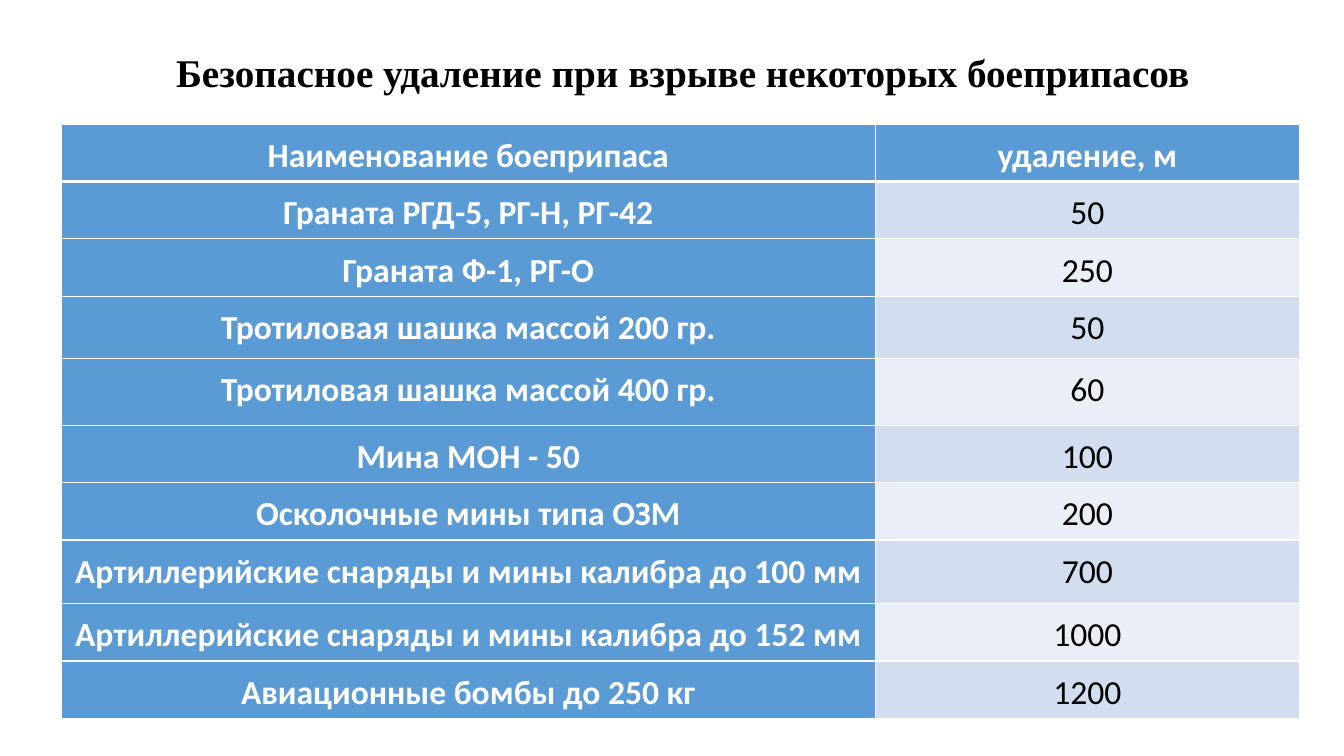
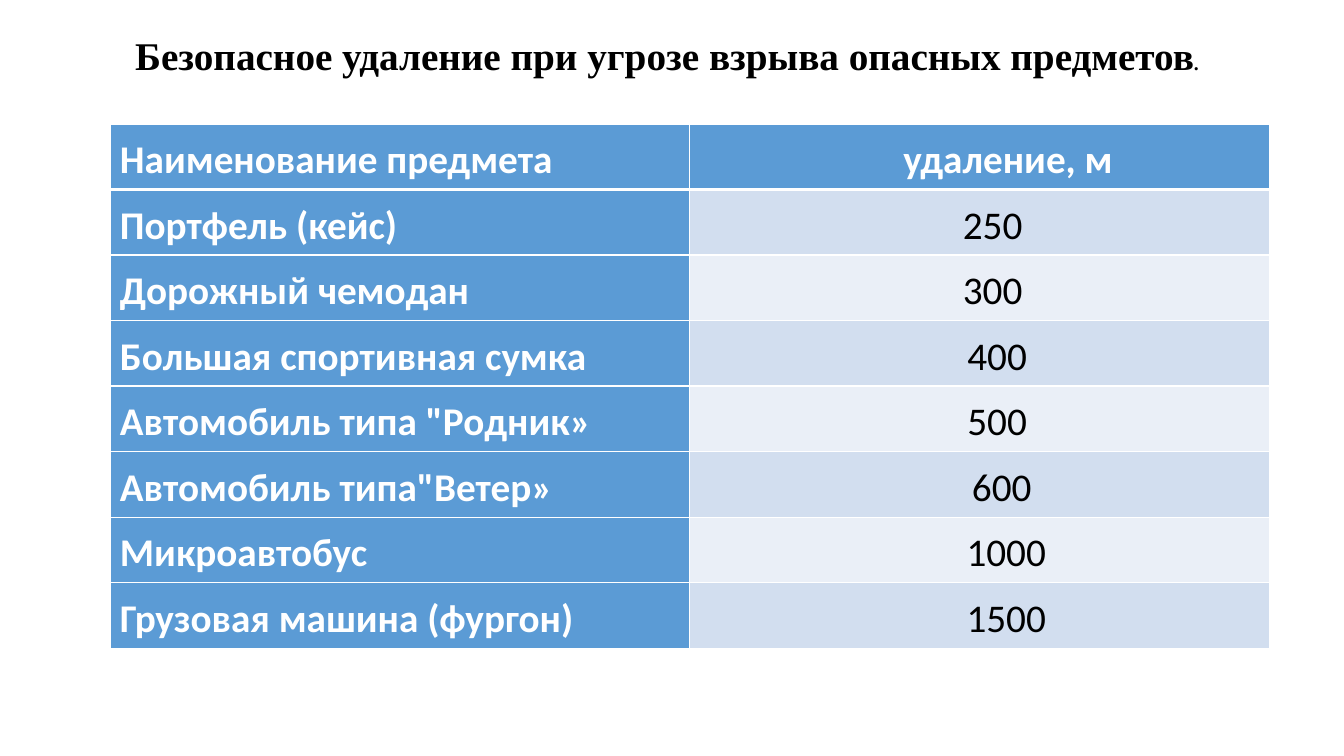
from dataclasses import dataclass

from lxml.etree import SubElement
from pptx import Presentation
from pptx.dml.color import RGBColor
from pptx.enum.text import MSO_ANCHOR, PP_ALIGN
from pptx.oxml.ns import qn
from pptx.util import Emu, Pt

EMU_PER_PX = 9144  # 100 px to the inch
COLORS = {
    "white": "FFFFFF",
    "text": "000000",
    "head": "5B9BD5",
    "odd": "D2DEEF",
    "even": "EAEFF7",
}
TITLE_FONT, TABLE_FONT = "Times New Roman", "Calibri"


@dataclass(frozen=True)
class Row:
    name: str
    distance: str
    height: int
    top: bool = False  # text at the top of the cell
    indent: int = 0    # left indent of the distance


@dataclass(frozen=True)
class DistanceSlide:
    title: str
    title_box: tuple[int, int, int, int]
    table_at: tuple[int, int]
    col_widths: tuple[int, int]
    size: int
    name_align: PP_ALIGN
    head_align: PP_ALIGN
    rows: tuple[Row, ...]  # the first one is the header
    title_end: str = ""    # smaller closing mark


CENTER, LEFT = PP_ALIGN.CENTER, PP_ALIGN.LEFT
SLIDES = (
    DistanceSlide(
        "Безопасное удаление при взрыве некоторых боеприпасов",
        (85, 43, 1184, 57), (61, 123), (807, 421), 24, CENTER, CENTER,
        (
            Row("Наименование боеприпаса", "удаление, м", 57),
            Row("Граната РГД-5, РГ-Н, РГ-42", "50", 57),
            Row("Граната Ф-1, РГ-О", "250", 57),
            Row("Тротиловая шашка массой 200 гр.", "50", 62, top=True),
            Row("Тротиловая шашка массой 400 гр.", "60", 66, top=True),
            Row("Мина МОН - 50", "100", 57),
            Row("Осколочные мины типа ОЗМ", "200", 57),
            Row("Артиллерийские снаряды и мины калибра до 100 мм", "700", 63, top=True),
            Row("Артиллерийские снаряды и мины калибра до 152 мм", "1000", 57, top=True),
            Row("Авиационные бомбы до 250 кг", "1200", 57),
        ),
    ),
    DistanceSlide(
        "Безопасное удаление при угрозе взрыва опасных предметов",
        (64, 26, 1195, 57), (109, 123), (575, 575), 28, LEFT, LEFT,
        (
            Row("Наименование предмета", "удаление, м", 65, indent=202),
            Row("Портфель (кейс)", "250", 65, indent=26),
            Row("Дорожный чемодан", "300", 65, indent=26),
            Row("Большая спортивная сумка", "400", 65, indent=35),
            Row("Автомобиль типа \"Родник»", "500", 65, indent=35),
            Row("Автомобиль типа\"Ветер»", "600", 65, indent=44),
            Row("Микроавтобус", "1000", 65, indent=53),
            Row("Грузовая машина (фургон)", "1500", 65, indent=53),
        ),
        title_end=".",
    ),
)


def px(n: int) -> Emu:
    return Emu(n * EMU_PER_PX)


def rgb(name: str) -> RGBColor:
    return RGBColor.from_string(COLORS[name])


def add_run(p, text: str, *, size: int, font: str, color: str = "text",
            bold: bool = False) -> None:
    r = p.add_run()
    r.text = text
    r.font.size, r.font.name, r.font.bold = Pt(size), font, bold
    r.font.color.rgb = rgb(color)


def set_borders(cell, *, top: int = 1, bottom: int = 1) -> None:
    tc_pr = cell._tc.get_or_add_tcPr()
    for tag, width in (("lnL", 1), ("lnR", 1), ("lnT", top), ("lnB", bottom)):
        ln = SubElement(tc_pr, qn(f"a:{tag}"), w=str(Pt(width)))
        fill = SubElement(ln, qn("a:solidFill"))
        SubElement(fill, qn("a:srgbClr"), val=COLORS["white"])


def add_title(slide, spec_: DistanceSlide) -> None:
    sp = slide.shapes.title
    sp.left, sp.top, sp.width, sp.height = map(px, spec_.title_box)
    tf = sp.text_frame
    tf.word_wrap = True
    tf.vertical_anchor = MSO_ANCHOR.MIDDLE
    p = tf.paragraphs[0]
    p.alignment = CENTER
    add_run(p, spec_.title, size=28, font=TITLE_FONT, bold=True)
    if spec_.title_end:
        add_run(p, spec_.title_end, size=14, font=TITLE_FONT, bold=True)


def fill_cell(cell, text: str, *, size: int, fill: str, strong: bool,
              align: PP_ALIGN, top: bool, indent: int) -> None:
    cell.fill.solid()
    cell.fill.fore_color.rgb = rgb(fill)
    cell.vertical_anchor = MSO_ANCHOR.TOP if top else MSO_ANCHOR.MIDDLE
    p = cell.text_frame.paragraphs[0]
    p.alignment, p.line_spacing = align, 1.15
    if indent:
        p._p.get_or_add_pPr().set("marL", str(px(indent)))
    add_run(p, text, size=size, font=TABLE_FONT, bold=strong,
            color="white" if strong else "text")


def add_distance_table(slide, data: DistanceSlide) -> None:
    heights = [row.height for row in data.rows]
    table = slide.shapes.add_table(
        len(data.rows), 2, *map(px, data.table_at),
        px(sum(data.col_widths)), px(sum(heights))).table
    for col, width in zip(table.columns, data.col_widths):
        col.width = px(width)
    for i, row in enumerate(data.rows):
        table.rows[i].height = px(row.height)
        band = "head" if i == 0 else "odd" if i % 2 else "even"
        columns = (
            (row.name, "head", data.name_align, 0),
            (row.distance, band, CENTER if i else data.head_align, row.indent),
        )
        for j, (text, fill, align, indent) in enumerate(columns):
            cell = table.cell(i, j)
            # Thick rule under the header
            set_borders(cell, top=3 if i == 1 else 1, bottom=3 if i == 0 else 1)
            fill_cell(cell, text, size=data.size, fill=fill, strong=fill == "head",
                      align=align, top=row.top, indent=indent)


def main() -> None:
    prs = Presentation()
    prs.slide_width, prs.slide_height = px(1333), px(750)
    title_only = prs.slide_layouts[5]
    for data in SLIDES:
        slide = prs.slides.add_slide(title_only)
        add_distance_table(slide, data)
        add_title(slide, data)
    prs.save("out.pptx")


if __name__ == "__main__":
    main()
